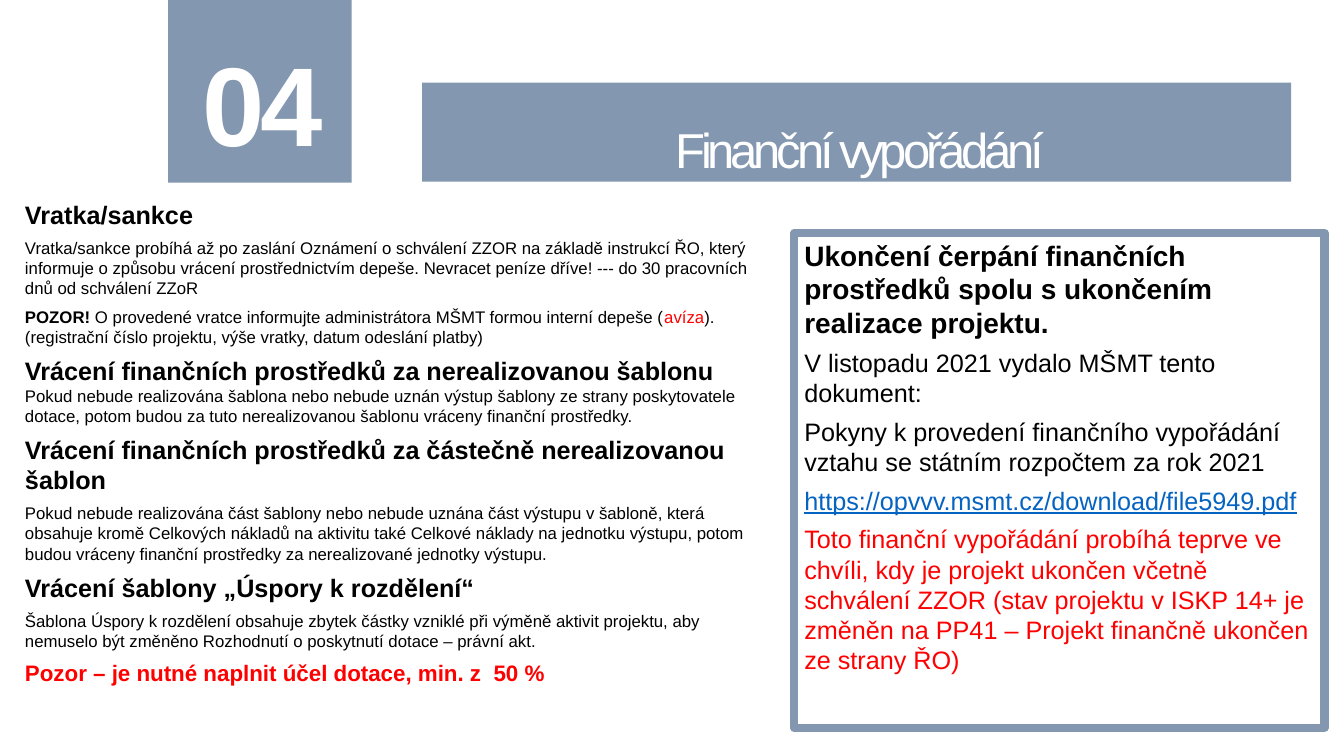
from lxml import etree
from pptx import Presentation
from pptx.dml.color import RGBColor
from pptx.enum.shapes import MSO_SHAPE as Shape
from pptx.enum.text import MSO_ANCHOR as Anchor, MSO_AUTO_SIZE as AutoSize, PP_ALIGN as Align
from pptx.oxml.ns import qn
from pptx.util import Cm, Pt

COLORS = {"slate": "8397B0", "white": "FFFFFF", "black": "000000",
          "red": "FF0000", "link": "0563C1"}
BANNER_INSETS = (0.4, 1.5, 0.25, 0.13)
TEXT_INSETS = (0.25, 0.13, 0.25, 0.13)


def rgb(name):
    return RGBColor.from_string(COLORS[name])


def add_span(para, text, size=12, bold=False, color="black", underline=False, tracking=None):
    """Add one formatted run to a paragraph."""
    span = para.add_run()
    span.text = text
    font = span.font
    font.name, font.size, font.bold = "Arial", Pt(size), bold
    font.underline = underline
    font.color.rgb = rgb(color)
    if tracking is not None:
        span._r.get_or_add_rPr().set("spc", str(tracking * 100))


class SlideBuilder:
    def __init__(self, deck):
        self.slide = deck.slides.add_slide(deck.slide_layouts[1])

    def place(self, shape, left, top, width, height):
        shape.left, shape.top = Cm(left), Cm(top)
        shape.width, shape.height = Cm(width), Cm(height)

    def set_frame(self, frame, insets, anchor):
        frame.word_wrap = True
        frame.auto_size = AutoSize.NONE
        frame.vertical_anchor = anchor
        (frame.margin_left, frame.margin_top,
         frame.margin_right, frame.margin_bottom) = map(Cm, insets)

    def rectangle(self, *bounds):
        box = self.slide.shapes.add_shape(Shape.RECTANGLE, *map(Cm, bounds))
        box.shadow.inherit = False
        return box

    def banner(self, shape, text, line_spacing, **style):
        shape.fill.solid()
        shape.fill.fore_color.rgb = rgb("slate")
        shape.line.fill.background()
        self.set_frame(shape.text_frame, BANNER_INSETS, Anchor.MIDDLE)
        para = shape.text_frame.paragraphs[0]
        para.alignment = Align.CENTER
        para.line_spacing = line_spacing
        add_span(para, text, color="white", tracking=-3, **style)

    def title(self, text, *bounds):
        title = self.slide.shapes.title
        self.place(title, *bounds)
        self.banner(title, text, 0.7, size=80, bold=True)

    def heading_bar(self, text, *bounds):
        self.banner(self.rectangle(*bounds), text, 0.5, size=35)

    def paragraphs(self, frame, content):
        self.set_frame(frame, TEXT_INSETS, Anchor.TOP)
        for index, spans in enumerate(content):
            para = frame.add_paragraph() if index else frame.paragraphs[0]
            properties = para._p.get_or_add_pPr()
            properties.set("marL", "0")
            properties.set("indent", "0")
            etree.SubElement(properties, qn("a:buNone"))
            para.alignment = Align.LEFT
            para.space_before = Pt(6 if index else 0)
            for text, style in spans:
                add_span(para, text, **style)

    def body(self, content, *bounds):
        body = self.slide.placeholders[1]
        self.place(body, *bounds)
        self.paragraphs(body.text_frame, content)

    def framed_box(self, content, *bounds):
        box = self.rectangle(*bounds)
        box.fill.background()
        box.line.color.rgb = rgb("slate")
        box.line.width = Pt(5.75)
        self.paragraphs(box.text_frame, content)


# Text styles
HEADING = dict(size=18, bold=True)
PLAIN = dict(size=12)
LARGE = dict(size=18)

REFUND_RULES = [
    [("Vratka/sankce", HEADING)],
    [("Vratka/sankce probíhá až po zaslání Oznámení o schválení ZZOR na základě instrukcí ŘO, "
      "který informuje o způsobu vrácení prostřednictvím depeše. Nevracet peníze dříve! "
      "--- do 30 pracovních dnů od schválení ZZoR", PLAIN)],
    [("POZOR! ", dict(bold=True)),
     ("O provedené vratce informujte administrátora MŠMT formou interní depeše (", PLAIN),
     ("avíza", dict(color="red")),
     ("). (registrační číslo projektu, výše vratky, datum odeslání platby)", PLAIN)],
    [("Vrácení finančních prostředků za nerealizovanou šablonu ", HEADING),
     ("Pokud nebude realizována šablona nebo nebude uznán výstup šablony ze strany "
      "poskytovatele dotace, potom budou za tuto nerealizovanou šablonu vráceny "
      "finanční prostředky.", PLAIN)],
    [("Vrácení finančních prostředků za částečně nerealizovanou šablon", HEADING)],
    [("Pokud nebude realizována část šablony nebo nebude uznána část výstupu v šabloně, "
      "která obsahuje kromě Celkových nákladů na aktivitu také Celkové náklady na jednotku "
      "výstupu, potom budou vráceny finanční prostředky za nerealizované jednotky výstupu.",
      PLAIN)],
    [("Vrácení šablony „Úspory k rozdělení“", HEADING)],
    [("Šablona Úspory k rozdělení obsahuje zbytek částky vzniklé při výměně aktivit projektu, "
      "aby nemuselo být změněno Rozhodnutí o poskytnutí dotace – právní akt.", PLAIN)],
    [("Pozor – je nutné naplnit účel dotace, min. z  50 %",
      dict(size=16, bold=True, color="red"))],
]

CLOSING_RULES = [
    [("Ukončení čerpání finančních prostředků spolu s ukončením realizace projektu.",
      dict(size=20, bold=True))],
    [("V listopadu 2021 vydalo MŠMT tento dokument:", LARGE)],
    [("Pokyny k provedení finančního vypořádání vztahu se státním rozpočtem za rok 2021", LARGE)],
    [("https://opvvv.msmt.cz/download/file5949.pdf",
      dict(size=18, color="link", underline=True))],
    [("Toto finanční vypořádání probíhá teprve ve chvíli, kdy je projekt ukončen včetně "
      "schválení ZZOR (stav projektu v ISKP 14+ je změněn na PP41 – Projekt finančně ukončen "
      "ze strany ŘO)", dict(size=18, color="red"))],
]


def main():
    deck = Presentation()
    deck.slide_width, deck.slide_height = Cm(33.87), Cm(19.05)
    page = SlideBuilder(deck)

    # Chapter number and heading
    page.title("04", 4.24, 0, 4.62, 4.6)
    page.heading_bar("Finanční vypořádání", 10.64, 2.08, 21.9, 2.5)

    # Rules on the left, framed notice on the right
    page.body(REFUND_RULES, 0.38, 4.88, 19.05, 13.77)
    page.framed_box(CLOSING_RULES, 20.02, 5.87, 13.36, 12.47)

    deck.save("out.pptx")


if __name__ == "__main__":
    main()
